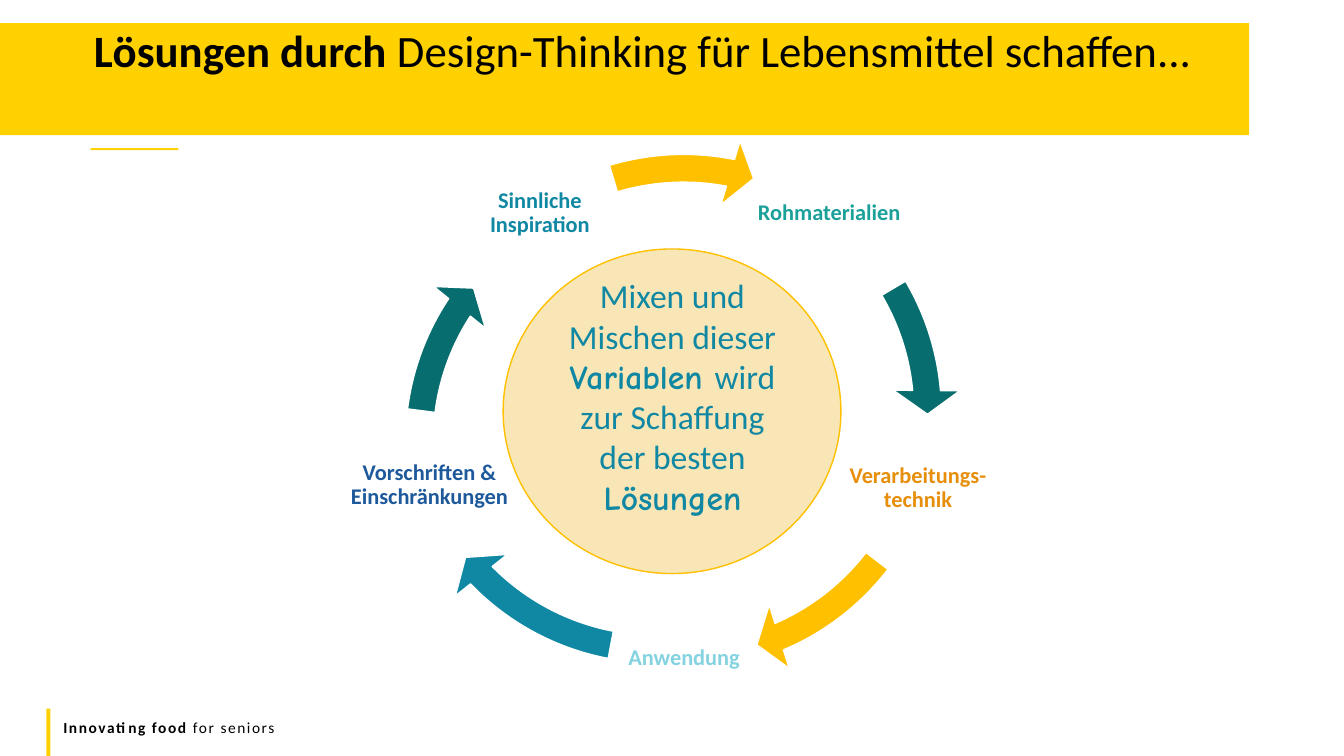
import pptx
import pptx.util
import pptx.dml.color
import pptx.enum.shapes
import pptx.enum.text

Inches, Pt = pptx.util.Inches, pptx.util.Pt
Shape = pptx.enum.shapes.MSO_SHAPE
Anchor = pptx.enum.text.MSO_ANCHOR
Align = pptx.enum.text.PP_ALIGN

GOLD, AMBER, TEAL, BLUE = "FFD100", "FFC000", "086D6E", "1188A3"

deck = pptx.Presentation()
deck.slide_width, deck.slide_height = Inches(13.33), Inches(7.5)
slide = deck.slides.add_slide(deck.slide_layouts[6])


def draw(kind, box, fill, line=None):
    """Add a preset shape; box is left, top, width, height in inches."""
    shape = slide.shapes.add_shape(kind, *map(Inches, box))
    shape.shadow.inherit = False
    shape.fill.solid()
    shape.fill.fore_color.rgb = pptx.dml.color.RGBColor.from_string(fill)
    if line:
        shape.line.color.rgb = pptx.dml.color.RGBColor.from_string(line)
        shape.line.width = Pt(1)
    else:
        shape.line.fill.background()
    return shape


def write(shape, runs, size, color, align=Align.CENTER, anchor=Anchor.TOP):
    """Fill a shape with one paragraph of (text, bold, font) runs."""
    frame = shape.text_frame
    frame.word_wrap = True
    frame.vertical_anchor = anchor
    para = frame.paragraphs[0]
    para.alignment = align
    para.font.size = Pt(size)
    para.font.color.rgb = pptx.dml.color.RGBColor.from_string(color)
    for text, bold, font in runs:
        run = para.add_run()
        run.text = text
        run.font.bold = bold
        run.font.name = font
    return para


# Accent bars and footer
for bar in ((0.9, 1.47, 0.87, 0.02), (0.46, 7.03, 0.04, 0.47)):
    draw(Shape.RECTANGLE, bar, GOLD)

foot = slide.shapes.add_textbox(Inches(0.53), Inches(7.07), Inches(12), Inches(0.29))
para = write(foot, [("Innovating food ", True, "Calibri"),
                    ("for seniors", False, "Calibri")], 11, "000000", Align.LEFT)
for run in para.runs:
    run.font._element.set("spc", "110")

# Title band
title = draw(Shape.RECTANGLE, (0, 0.23, 12.39, 1.11), GOLD)
para = write(title, [("Lösungen durch ", True, "Calibri"),
                     ("Design-Thinking für Lebensmittel schaffen...", False, "Calibri")],
             32, "000000", Align.LEFT)
para.line_spacing = 0.9
title.text_frame.margin_left = Inches(0.93)
title.text_frame.margin_top = Inches(0.06)

# Cycle: label box, label colour, arrow corner, start and end angle, arrow colour
side = 1.47
ring = 5.5
steps = [
    ("Rohmaterialien", 7.49, 1.38, side, "1BA19A", 4.03, 1.34, 329.44, 354.88, TEAL),
    ("Verarbeitungs-technik", 8.37, 4.11, side, "E78E0B", 4.03, 1.34, 37.56, 66.91, AMBER),
    ("Anwendung", 6.05, 5.8, side, "85D2E1", 3.76, 1.27, 100.76, 135.81, BLUE),
    ("Vorschriften & Einschränkungen", 3.29, 4.08, 1.94, "1D599B",
     3.83, 1.63, 187.25, 213.34, TEAL),
    ("Sinnliche Inspiration", 4.62, 1.38, side, BLUE, 4.03, 1.34, 253.31, 281.09, AMBER),
]
unit = 0.6  # adjustment value of one degree
for text, left, top, width, ink, x, y, start, end, fill in steps:
    label = slide.shapes.add_textbox(*map(Inches, (left, top, width, side)))
    para = write(label, [(text, True, "Calibri")], 16, ink, anchor=Anchor.MIDDLE)
    para.line_spacing = 0.9
    frame = label.text_frame
    frame.margin_left = frame.margin_right = Inches(0.02)
    frame.margin_top = frame.margin_bottom = Inches(0.02)

    arrow = draw(Shape.CIRCULAR_ARROW, (x, y, ring, ring), fill, "FFFFFF")
    for i, value in enumerate((0.05, 5.6 * unit, end * unit, start * unit, 0.06)):
        arrow.adjustments[i] = value

# Centre
draw(Shape.OVAL, (4.99, 2.47, 3.35, 3.22), "F9E6B6", AMBER)
core = slide.shapes.add_textbox(*map(Inches, (5.47, 2.68, 2.4, 2.52)))
write(core, [("Mixen und Mischen dieser ", False, "Calibri"),
             ("Variablen ", True, "Comic Neue"),
             ("wird zur Schaffung der besten ", False, "Calibri"),
             ("Lösungen", True, "Comic Neue")], 24, BLUE)

deck.save("out.pptx")
